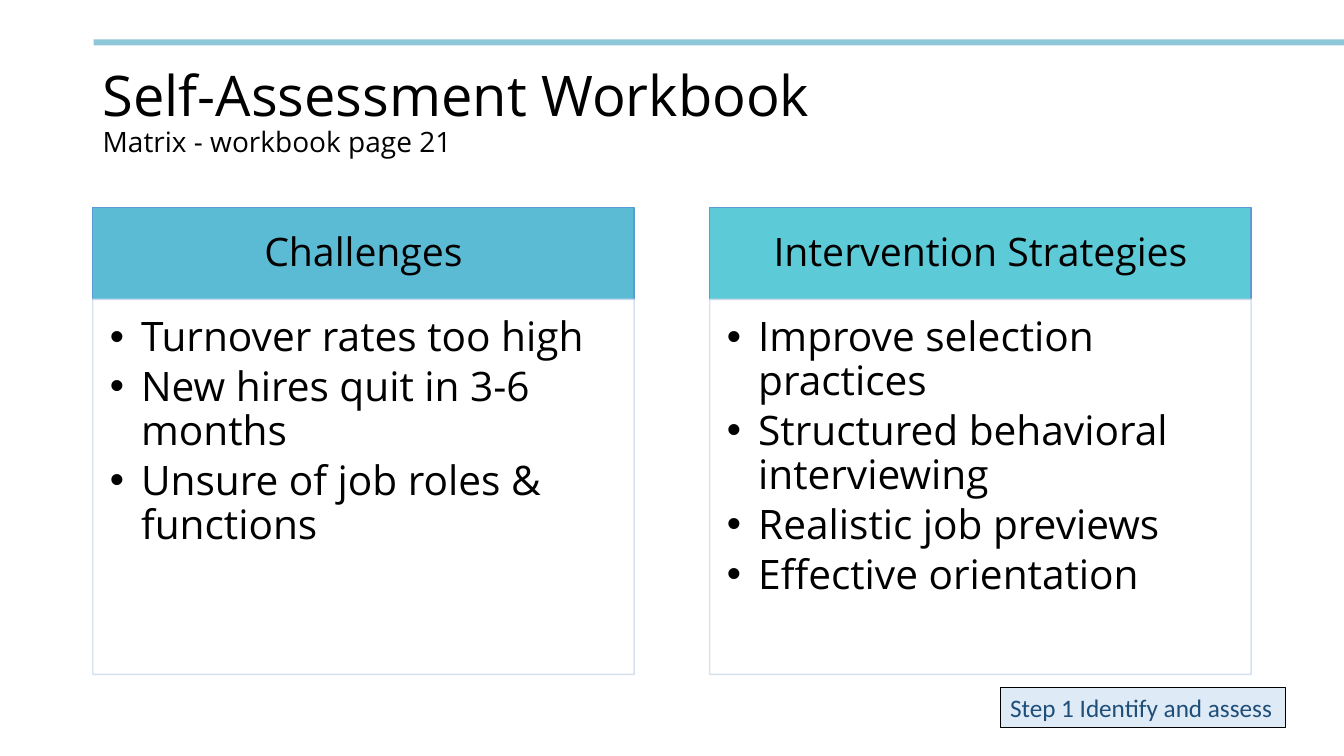
from dataclasses import dataclass

from lxml.etree import SubElement
from pptx import Presentation
from pptx.dml.color import RGBColor
from pptx.enum.shapes import MSO_SHAPE as Preset
from pptx.enum.text import MSO_ANCHOR as Anchor, MSO_AUTO_SIZE as AutoSize, PP_ALIGN as Align
from pptx.oxml.ns import qn
from pptx.shapes.autoshape import Shape
from pptx.slide import Slide
from pptx.text.text import TextFrame, _Paragraph as Paragraph
from pptx.util import Inches, Pt

COLORS = {
    "rule": "8EC7D7",
    "challenges": "5BBBD5",
    "strategies": "5DCBD7",
    "header_line": "5B9BD5",
    "body_line": "D2DEEF",
    "step_fill": "DEEBF7",
    "step_text": "1F4E79",
    "black": "000000",
}
HEADING_FONT = "Open Sans"
COLUMN_LEFT, COLUMN_STEP, COLUMN_WIDTH = 0.92, 6.12, 5.37
HEADER_TOP, HEADER_HEIGHT, BODY_HEIGHT = 2.06, 0.91, 3.72
BULLET_INDENT = Inches(0.31)


@dataclass(frozen=True)
class Column:
    title: str
    fill: str
    points: tuple[str, ...]


COLUMNS = (
    Column("Challenges", "challenges", (
        "Turnover rates too high",
        "New hires quit in 3-6 months",
        "Unsure of job roles & functions",
    )),
    Column("Intervention Strategies", "strategies", (
        "Improve selection practices",
        "Structured behavioral interviewing",
        "Realistic job previews",
        "Effective orientation",
    )),
)


def add_box(page: Slide, left: float, top: float, width: float, height: float,
            fill: str | None = None, line: str | None = None, line_width: float = 1) -> Shape:
    box = page.shapes.add_shape(
        Preset.RECTANGLE, Inches(left), Inches(top), Inches(width), Inches(height))
    box.shadow.inherit = False
    if fill:
        box.fill.solid()
        box.fill.fore_color.rgb = RGBColor.from_string(COLORS[fill])
    else:
        box.fill.background()
    if line:
        box.line.color.rgb = RGBColor.from_string(COLORS[line])
        box.line.width = Pt(line_width)
    else:
        box.line.fill.background()
    return box


def set_frame(frame: TextFrame, anchor: Anchor, insets: tuple[float, float, float, float]) -> None:
    """Wrap the text and set its anchor and its left, top, right and bottom insets."""
    frame.word_wrap = True
    frame.vertical_anchor = anchor
    frame.margin_left, frame.margin_top, frame.margin_right, frame.margin_bottom = map(Inches, insets)


def add_span(para: Paragraph, text: str, size: float,
             font: str = HEADING_FONT, color: str = "black") -> None:
    span = para.add_run()
    span.text = text
    span.font.size = Pt(size)
    span.font.name = font
    span.font.color.rgb = RGBColor.from_string(COLORS[color])


def set_bullet(para: Paragraph) -> None:
    properties = para._p.get_or_add_pPr()
    properties.set("marL", str(BULLET_INDENT))
    properties.set("indent", str(-BULLET_INDENT))
    SubElement(properties, qn("a:buFont")).set("typeface", "Arial")
    SubElement(properties, qn("a:buChar")).set("char", "•")


def add_title(page: Slide) -> None:
    box = page.shapes.add_textbox(Inches(0.92), Inches(0.4), Inches(11.5), Inches(1.45))
    set_frame(box.text_frame, Anchor.MIDDLE, (0.1, 0.05, 0.1, 0.05))
    para = box.text_frame.paragraphs[0]
    para.line_spacing = 0.9
    add_span(para, "Self-Assessment Workbook", 40)
    para.add_line_break()
    add_span(para, "Matrix - workbook page 21", 20)


def add_column(page: Slide, column: Column, left: float) -> None:
    header = add_box(page, left, HEADER_TOP, COLUMN_WIDTH, HEADER_HEIGHT,
                     column.fill, "header_line")
    set_frame(header.text_frame, Anchor.MIDDLE, (0.22, 0.12, 0.22, 0.12))
    para = header.text_frame.paragraphs[0]
    para.alignment = Align.CENTER
    para.line_spacing = 0.9
    add_span(para, column.title, 28)

    body = add_box(page, left, HEADER_TOP + HEADER_HEIGHT, COLUMN_WIDTH, BODY_HEIGHT,
                   line="body_line")
    line_color = body.line._ln.find(".//" + qn("a:srgbClr"))
    SubElement(line_color, qn("a:alpha")).set("val", "90000")
    frame = body.text_frame
    set_frame(frame, Anchor.TOP, (0.17, 0.17, 0.23, 0.25))
    for index, point in enumerate(column.points):
        para = frame.add_paragraph() if index else frame.paragraphs[0]
        para.alignment = Align.LEFT
        para.line_spacing = 0.9
        para.space_after = Pt(4.35)
        set_bullet(para)
        add_span(para, point, 29)


def add_step_label(page: Slide) -> None:
    box = add_box(page, 9.92, 6.82, 2.83, 0.4, "step_fill", "black", 0.75)
    frame = box.text_frame
    set_frame(frame, Anchor.TOP, (0.1, 0.05, 0.1, 0.05))
    frame.word_wrap = False
    frame.auto_size = AutoSize.SHAPE_TO_FIT_TEXT
    para = frame.paragraphs[0]
    para.alignment = Align.LEFT
    add_span(para, "Step 1 Identify and assess", 18, "Calibri", "step_text")


def main() -> None:
    deck = Presentation()
    deck.slide_width, deck.slide_height = Inches(13.33), Inches(7.5)
    page = deck.slides.add_slide(deck.slide_layouts[6])
    add_box(page, 0.93, 0.39, 12.4, 0.06, "rule")
    add_title(page)
    for index, column in enumerate(COLUMNS):
        add_column(page, column, COLUMN_LEFT + index * COLUMN_STEP)
    add_step_label(page)
    deck.save("out.pptx")


if __name__ == "__main__":
    main()
